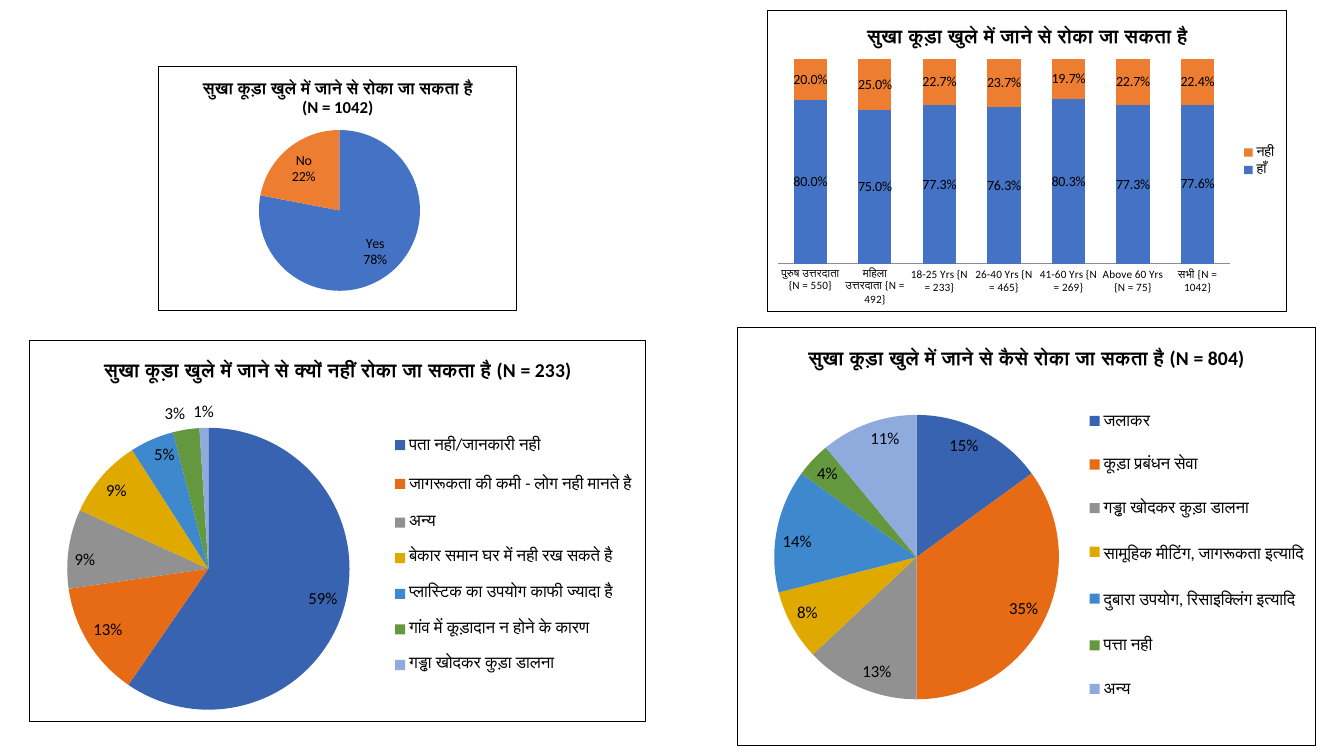
import pptx
import pptx.chart.data
import pptx.dml.color
import pptx.enum.chart
import pptx.oxml
import pptx.oxml.ns
import pptx.util

BLACK = pptx.dml.color.RGBColor(0x00, 0x00, 0x00)
AXIS_GRAY = pptx.dml.color.RGBColor(0x8C, 0x8C, 0x8C)
BLUE = pptx.dml.color.RGBColor(0x44, 0x72, 0xC4)
ORANGE = pptx.dml.color.RGBColor(0xED, 0x7D, 0x31)
GRAY = pptx.dml.color.RGBColor(0xA5, 0xA5, 0xA5)
GOLD = pptx.dml.color.RGBColor(0xFF, 0xC0, 0x00)
SKY = pptx.dml.color.RGBColor(0x5B, 0x9B, 0xD5)
GREEN = pptx.dml.color.RGBColor(0x70, 0xAD, 0x47)

TWO_SLICES = [(BLUE, 0), (ORANGE, 0)]
SEVEN_SLICES = [(c, -0.12) for c in (BLUE, ORANGE, GRAY, GOLD, SKY, GREEN)] + [(BLUE, 0.4)]

TYPES = pptx.enum.chart.XL_CHART_TYPE
LABELS = pptx.enum.chart.XL_LABEL_POSITION
WHOLE_PERCENT = '0"%"'
SHOW_PERCENT = {"show_value": False, "show_percentage": True, "number_format": "0%"}
SHOW_NAME = dict(SHOW_PERCENT, show_category_name=True)
SHOW_VALUE = {"show_value": True, "number_format": WHOLE_PERCENT}
SHOW_SHARE = {"show_value": True, "number_format": "0.0%"}


class Charts:
    font_name = "Calibri"

    def __init__(self, prs):
        self.s = prs.slides.add_slide(prs.slide_layouts[6])

    def format(self, target, values):
        for name, value in values.items():
            setattr(target, name, value)

    def font(self, font, size, bold=False):
        self.format(font, {"name": self.font_name, "size": pptx.util.Pt(size), "bold": bold})
        font.color.rgb = BLACK

    def xml(self, text):
        tag, rest = text.split(">", 1)
        return pptx.oxml.parse_xml(f"{tag} {pptx.oxml.ns.nsdecls('c', 'a')}>{rest}")

    def layout(self, parent, index, box, inner=False):
        for old in parent.findall(pptx.oxml.ns.qn("c:layout")):
            parent.remove(old)
        target = '<c:layoutTarget val="inner"/>' if inner else ""
        modes = '<c:xMode val="edge"/><c:yMode val="edge"/>'
        sizes = "".join(f'<c:{k} val="{v}"/>' for k, v in zip("xywh", box))
        parent.insert(index, self.xml(
            f"<c:layout><c:manualLayout>{target}{modes}{sizes}</c:manualLayout></c:layout>"))

    def chart(self, kind, at, title, title_size, cats, series, plot, number_format):
        data = pptx.chart.data.CategoryChartData(number_format=number_format)
        data.categories = cats
        for name, values in series:
            data.add_series(name, values)
        box = [pptx.util.Inches(v) for v in at]
        chart = self.s.shapes.add_chart(kind, *box, data).chart
        self.font(chart.font, 10)
        chart.has_title = True
        tf = chart.chart_title.text_frame
        tf.text = title
        self.font(tf.paragraphs[0].runs[0].font, title_size, True)
        chart.chart_title.include_in_layout = False
        chart.has_legend = False
        space = chart._chartSpace
        space.chart.addnext(self.xml(
            '<c:spPr><a:solidFill><a:srgbClr val="FFFFFF"/></a:solidFill>'
            f'<a:ln w="9525"><a:solidFill><a:srgbClr val="{BLACK}"/></a:solidFill></a:ln></c:spPr>'))
        self.layout(space.chart.plotArea, 0, plot, True)
        return chart

    def legend(self, chart, size, box=None):
        chart.has_legend = True
        legend = chart.legend
        self.format(legend, {"position": pptx.enum.chart.XL_LEGEND_POSITION.RIGHT,
                             "include_in_layout": False})
        self.font(legend.font, size)
        if box:
            legend._element.get_or_add_legendPos()
            self.layout(legend._element, 1, box)

    def labels(self, series, size, show, position):
        labels = series.data_labels
        self.format(labels, dict(show, number_format_is_linked=False, position=position))
        self.font(labels.font, size)
        return labels

    def pie(self, at, title, title_size, cats, values, plot, slices, show, size,
            legend=None, outside=()):
        chart = self.chart(TYPES.PIE, at, title, title_size, cats,
                           [("Series 1", values)], plot, WHOLE_PERCENT)
        chart.plots[0].vary_by_categories = True
        series = chart.plots[0].series[0]
        labels = self.labels(series, size, show, LABELS.INSIDE_END)
        if labels.show_category_name:
            bubble = labels._element.find(pptx.oxml.ns.qn("c:showBubbleSize"))
            bubble.addnext(self.xml("<c:separator>\n</c:separator>"))
        for i, (color, brightness) in enumerate(slices):
            fill = series.points[i].format.fill
            fill.solid()
            fill.fore_color.rgb = color
            fill.fore_color.brightness = brightness
        for i in outside:
            label = series.points[i].data_label
            self.font(label.font, size)
            label.position = LABELS.OUTSIDE_END
        if legend:
            self.legend(chart, 12, legend)

    def stacked_columns(self, at, title, cats, series, colors, plot):
        chart = self.chart(TYPES.COLUMN_STACKED_100, at, title, 14, cats, series, plot, "0.0%")
        self.format(chart.plots[0], {"gap_width": 95, "overlap": 100, "vary_by_categories": False})
        for ser, color in zip(chart.plots[0].series, colors):
            ser.format.fill.solid()
            ser.format.fill.fore_color.rgb = color
            self.labels(ser, 10, SHOW_SHARE, LABELS.CENTER)
        self.format(chart.value_axis, {"visible": False, "has_major_gridlines": False})
        axis = chart.category_axis
        none = pptx.enum.chart.XL_TICK_MARK.NONE
        self.format(axis, {"major_tick_mark": none, "minor_tick_mark": none})
        axis.format.line.color.rgb = AXIS_GRAY
        self.font(axis.tick_labels.font, 8)
        self.legend(chart, 10)


def main():
    prs = pptx.Presentation()
    prs.slide_width = pptx.util.Inches(13.33)
    prs.slide_height = pptx.util.Inches(7.5)
    charts = Charts(prs)
    charts.pie((1.57, 0.65, 3.56, 2.44),
               "सुखा कूड़ा खुले में जाने से रोका जा सकता है (N = 1042)", 12,
               ["Yes", "No"], [78, 22], (0.28, 0.26, 0.45, 0.66),
               TWO_SLICES, SHOW_NAME, 10)
    charts.pie((7.31, 3.24, 5.74, 4.16),
               "सुखा कूड़ा खुले में जाने से कैसे रोका जा सकता है (N = 804)", 14,
               ["जलाकर", "कूड़ा प्रबंधन सेवा", "गड्ढा खोदकर कुड़ा डालना",
                "सामूहिक मीटिंग, जागरूकता इत्यादि", "दुबारा उपयोग, रिसाइक्लिंग इत्यादि",
                "पत्ता नही", "अन्य"],
               [15, 35, 13, 8, 14, 4, 11], (0.04, 0.21, 0.54, 0.68),
               SEVEN_SLICES, SHOW_PERCENT, 12, (0.6, 0.14, 0.39, 0.81))
    charts.pie((0.29, 3.37, 6.12, 3.79),
               "सुखा कूड़ा खुले में जाने से क्यों नहीं रोका जा सकता है (N = 233)", 14,
               ["पता नही/जानकारी नही", "जागरूकता की कमी - लोग नही मानते है", "अन्य",
                "बेकार समान घर में नही रख सकते है", "प्लास्टिक का उपयोग काफी ज्यादा है",
                "गांव में कूड़ादान न होने के कारण", "गड्ढा खोदकर कुड़ा डालना"],
               [59, 13, 9, 9, 5, 3, 1], (0.06, 0.23, 0.46, 0.74),
               SEVEN_SLICES, SHOW_VALUE, 12, (0.58, 0.2, 0.41, 0.72), (5, 6))
    charts.stacked_columns(
        (7.61, 0.1, 5.16, 3), "सुखा कूड़ा खुले में जाने से रोका जा सकता है",
        ["पुरुष उत्तरदाता {N = 550}", "महिला उत्तरदाता {N = 492}", "18-25 Yrs {N = 233}",
         "26-40 Yrs {N = 465}", "41-60 Yrs {N = 269}", "Above 60 Yrs {N = 75}",
         "सभी {N = 1042}"],
        [("हाँ", [0.8, 0.75, 0.773, 0.763, 0.803, 0.773, 0.776]),
         ("नही", [0.2, 0.25, 0.227, 0.237, 0.197, 0.227, 0.224])],
        [BLUE, ORANGE], (0.02, 0.16, 0.87, 0.68))
    prs.save("out.pptx")


if __name__ == "__main__":
    main()
